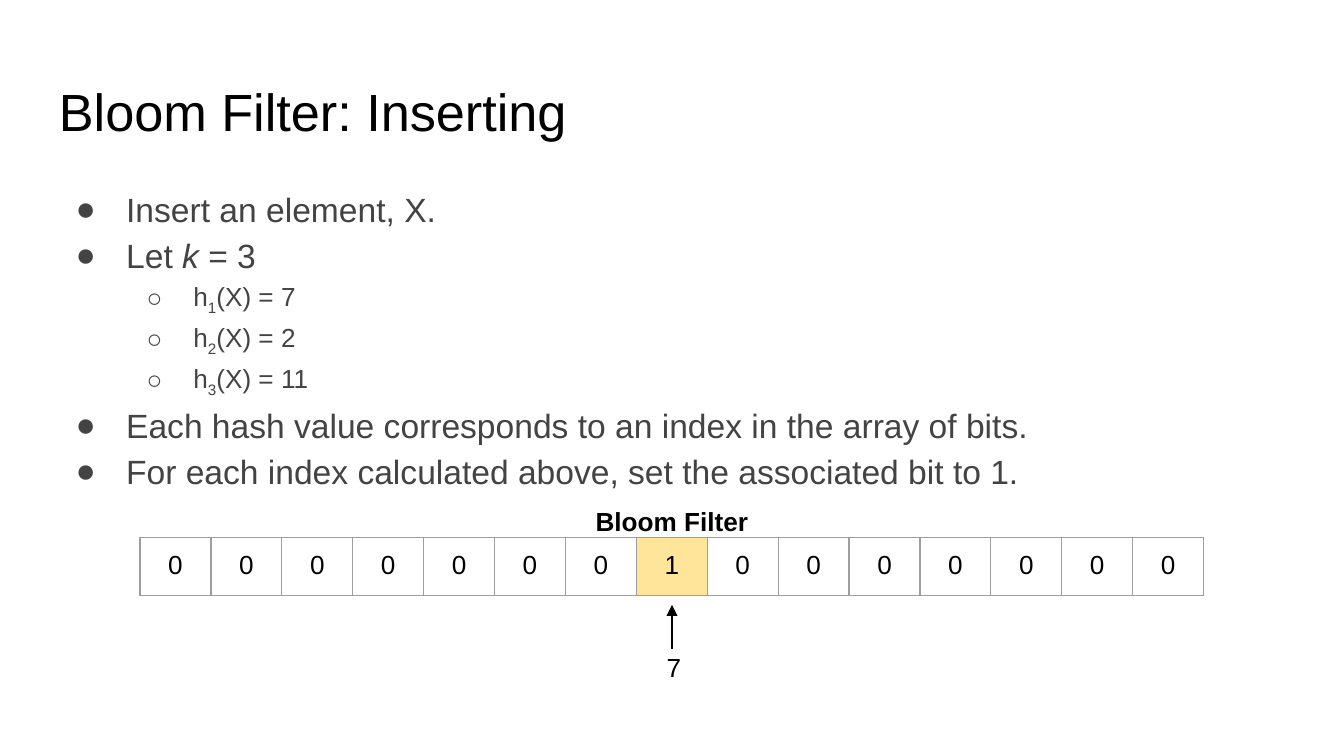
import pptx
import pptx.dml.color
import pptx.enum.shapes
import pptx.enum.text
import pptx.oxml.ns
import pptx.oxml.xmlchemy
import pptx.util
import lxml.etree

Pt = pptx.util.Pt
RGBColor = pptx.dml.color.RGBColor
PP_ALIGN = pptx.enum.text.PP_ALIGN
qn = pptx.oxml.ns.qn

BLACK = RGBColor(0x00, 0x00, 0x00)
BODY_GREY = RGBColor(0x43, 0x43, 0x43)
BORDER_GREY = RGBColor(0x9E, 0x9E, 0x9E)
HIGHLIGHT = RGBColor(0xFF, 0xE5, 0x99)
FONT = "Arial"
INSET = Pt(7.2)

BIT_COUNT = 15
SET_BIT = 7
HASHES = [("1", 7), ("2", 2), ("3", 11)]
LEVELS = [(18, 36, -27, "●"), (14, 72, -25, "○")]
BULLETS = [
    (0, [("Insert an element, X.", "")]),
    (0, [("Let ", ""), ("k", "italic"), (" = 3", "")]),
    *[(1, [("h", ""), (n, "sub"), (f"(X) = {value}", "")]) for n, value in HASHES],
    (0, [("Each hash value corresponds to an index in the array of bits.", "")]),
    (0, [("For each index calculated above, set the associated bit to 1.", "")]),
]


def add_xml(parent, tag, **attrs):
    """Append a DrawingML child element and return it."""
    return lxml.etree.SubElement(parent, qn(tag), attrs)


def style_run(r, size, color, bold=False):
    """Set the font of one run."""
    r.font.name = FONT
    r.font.size = Pt(size)
    r.font.color.rgb = color
    r.font.bold = bold


def add_box(s, left, top, width, height):
    """Add an empty wrapping text box and return its text frame."""
    tf = s.shapes.add_textbox(Pt(left), Pt(top), Pt(width), Pt(height)).text_frame
    tf.word_wrap = True
    tf.margin_left = tf.margin_right = tf.margin_top = tf.margin_bottom = INSET
    return tf


def add_label(s, text, box, size, align=PP_ALIGN.CENTER, bold=False):
    """Add a single-line black text."""
    tf = add_box(s, *box)
    tf.text = text
    p = tf.paragraphs[0]
    p.alignment = align
    style_run(p.runs[0], size, BLACK, bold)


def set_bullet(p, level):
    """Give a paragraph the indent and bullet of its level."""
    _, margin, indent, char = LEVELS[level]
    p.level = level
    p.line_spacing = 1.15
    pPr = p._p.get_or_add_pPr()
    pPr.set("marL", str(Pt(margin)))
    pPr.set("indent", str(Pt(indent)))
    add_xml(add_xml(pPr, "a:buClr"), "a:srgbClr", val=str(BODY_GREY))
    add_xml(pPr, "a:buFont", typeface=FONT)
    add_xml(pPr, "a:buChar", char=char)


def add_bullets(s, items, box):
    """Add the two-level bulleted list."""
    tf = add_box(s, *box)
    for i, (level, runs) in enumerate(items):
        p = tf.add_paragraph() if i else tf.paragraphs[0]
        set_bullet(p, level)
        for text, style in runs:
            r = p.add_run()
            r.text = text
            style_run(r, LEVELS[level][0], BODY_GREY)
            if style == "italic":
                r.font.italic = True
            elif style == "sub":
                r._r.get_or_add_rPr().set("baseline", "-25000")


def set_borders(cell):
    """Draw a thin grey border on all four sides of a cell."""
    tcPr = cell._tc.get_or_add_tcPr()
    for side in ("a:lnL", "a:lnR", "a:lnT", "a:lnB"):
        ln = add_xml(tcPr, side, w=str(Pt(0.75)))
        add_xml(add_xml(ln, "a:solidFill"), "a:srgbClr", val=str(BORDER_GREY))


def add_bit_array(s, left, top, cell_width, height):
    """Add the one-row table of bits with the set bit highlighted."""
    frame = s.shapes.add_table(
        1, BIT_COUNT, Pt(left), Pt(top), Pt(cell_width * BIT_COUNT), Pt(height))
    table = frame.table
    table.first_row = table.horz_banding = False
    for i, cell in enumerate(table.iter_cells()):
        table.columns[i].width = Pt(cell_width)
        cell.margin_left = cell.margin_right = INSET
        cell.margin_top = cell.margin_bottom = INSET
        cell.text = "1" if i == SET_BIT else "0"
        p = cell.text_frame.paragraphs[0]
        p.alignment = PP_ALIGN.CENTER
        style_run(p.runs[0], 14, BLACK)
        set_borders(cell)
        if i == SET_BIT:
            cell.fill.solid()
            cell.fill.fore_color.rgb = HIGHLIGHT
        else:
            cell.fill.background()


def add_arrow(s, x, start_y, end_y):
    """Add a vertical arrow that points at end_y."""
    line = s.shapes.add_connector(
        pptx.enum.shapes.MSO_CONNECTOR.STRAIGHT, Pt(x), Pt(start_y), Pt(x), Pt(end_y))
    line.line.color.rgb = BLACK
    line.line.width = Pt(0.75)
    add_xml(line.line._get_or_add_ln(), "a:tailEnd", type="triangle")
    add_xml(line._element.spPr, "a:effectLst")


def main():
    """Build the slide and save it."""
    prs = pptx.Presentation()
    prs.slide_width, prs.slide_height = Pt(720), Pt(405)
    s = prs.slides.add_slide(prs.slide_layouts[6])
    add_label(s, "Bloom Filter: Inserting", (24.5, 35, 671, 45), 28, PP_ALIGN.LEFT)
    add_bullets(s, BULLETS, (24.5, 90.7, 671, 118))
    left, cell_width = 75, 38
    center = left + (SET_BIT + 0.5) * cell_width
    add_bit_array(s, left, 288, cell_width, 30)
    add_label(s, "Bloom Filter", (center - 63.5, 263.5, 127, 31), 14, bold=True)
    add_arrow(s, center, 347.5, 324)
    add_label(s, str(SET_BIT), (center - 10, 342, 21, 27), 14)
    prs.save("out.pptx")


if __name__ == "__main__":
    main()
